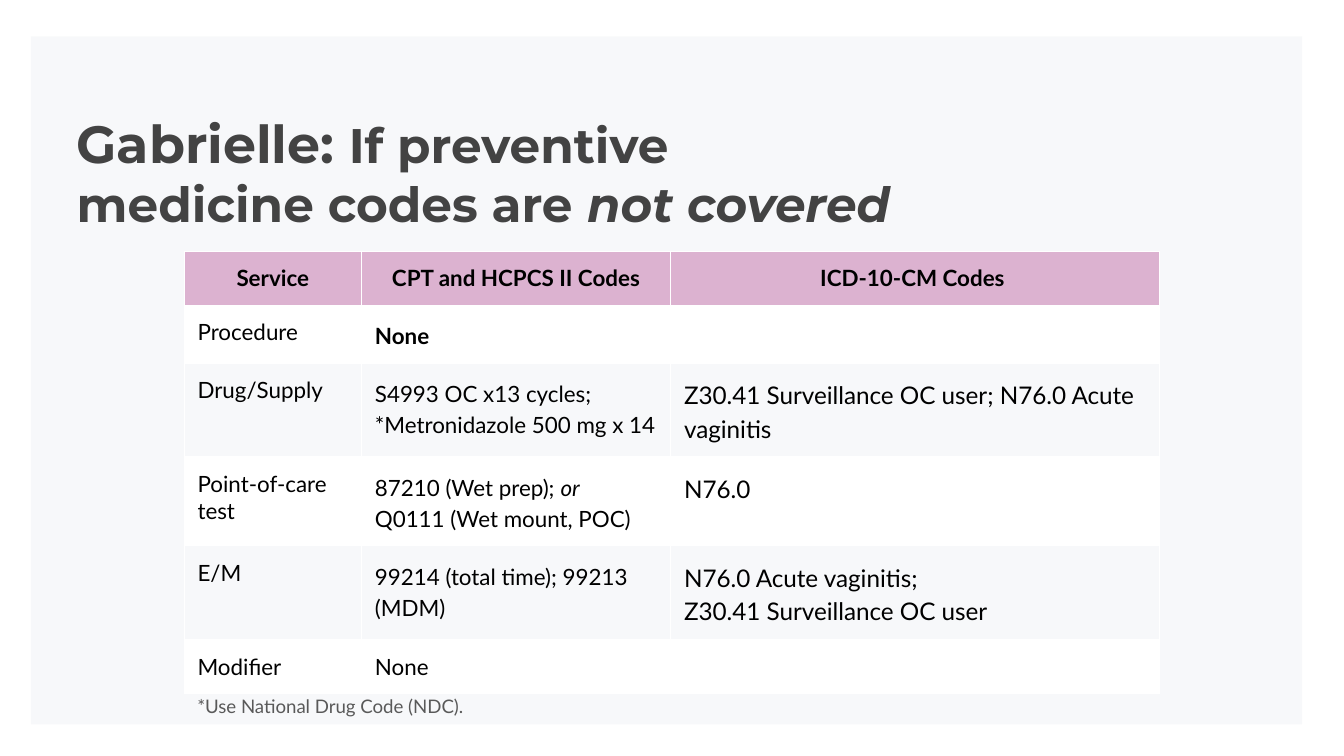
from lxml import etree
from pptx import Presentation, util as u
from pptx.dml.color import RGBColor
from pptx.enum import shapes, text
from pptx.oxml.ns import qn

BODY_FONT = {"name": "Lato", "size": u.Pt(12), "bold": False, "italic": False}
HEADER = ["Service", "CPT and HCPCS II Codes", "ICD-10-CM Codes "]
ROWS = [
    ["Procedure", [[("None", {"bold": True})]], []],
    ["Drug/Supply",
     [[("S4993 OC x13 cycles; *Metronidazole 500 mg x 14", {})]],
     [[("Z30.41 Surveillance OC user; N76.0 Acute vaginitis", {})]]],
    ["Point-of-care test",
     [[("87210 (Wet prep); ", {}), ("or", {"italic": True})],
      [("Q0111 (Wet mount, POC)", {})]],
     [[("N76.0", {})]]],
    ["E/M",
     [[("99214 (total time); 99213 (MDM)", {})]],
     [[("N76.0 Acute vaginitis;", {})], [("Z30.41 Surveillance OC user", {})]]],
    ["Modifier", [[("None", {})]], []],
]
COLUMN_WIDTHS = [1.32, 2.3, 3.64]
ROW_HEIGHTS = [0.39, 0.34, 0.56, 0.55, 0.6, 0.4]


def set_color(color_format, color):
    """Apply a hex colour to a font or fill colour."""
    color_format.rgb = RGBColor.from_string(color)


def fill_solid(fill, color, opacity=100):
    """Fill with a hex colour at an opacity in percent."""
    fill.solid()
    set_color(fill.fore_color, color)
    if opacity < 100:
        element = fill._xPr.find(".//" + qn("a:srgbClr"))
        etree.SubElement(element, qn("a:alpha"), val=str(opacity * 1000))


def set_attributes(target, values):
    """Set each named attribute on the target."""
    for name, value in values.items():
        setattr(target, name, value)


def set_margins(target):
    """Give a frame or cell equal margins."""
    sides = ("left", "top", "right", "bottom")
    set_attributes(target, {f"margin_{side}": u.Inches(0.1) for side in sides})


def write_paragraphs(frame, paragraphs, font, color, **layout):
    """Write paragraphs of (wording, overrides) runs into a frame."""
    for index, runs in enumerate(paragraphs):
        paragraph = frame.add_paragraph() if index else frame.paragraphs[0]
        set_attributes(paragraph, layout)
        for wording, overrides in runs:
            run = paragraph.add_run()
            run.text = wording
            set_attributes(run.font, {**font, **overrides})
            set_color(run.font.color, color)


def add_panel(slide, left, top, width, height):
    """Place the pale panel behind the other parts."""
    box = map(u.Inches, (left, top, width, height))
    panel = slide.shapes.add_shape(shapes.MSO_SHAPE.RECTANGLE, *box)
    panel.shadow.inherit = False
    panel.line.fill.background()
    fill_solid(panel.fill, "073763", 3)
    slide.shapes._spTree.insert(2, panel._element)


def place_title(slide, left, top, width, height):
    """Place and format the slide title."""
    title = slide.shapes.title
    box = map(u.Inches, (left, top, width, height))
    set_attributes(title, dict(zip(("left", "top", "width", "height"), box)))
    frame = title.text_frame
    set_margins(frame)
    set_attributes(frame, {"word_wrap": True, "auto_size": text.MSO_AUTO_SIZE.NONE,
                           "vertical_anchor": text.MSO_ANCHOR.TOP})
    runs = [("Gabrielle: ", {"size": u.Pt(28)}),
            ("If preventive medicine codes are ", {}),
            ("not covered", {"italic": True})]
    font = {"name": "Montserrat", "size": u.Pt(26), "bold": True, "italic": False}
    write_paragraphs(frame, [runs], font, "434343",
                     alignment=text.PP_ALIGN.LEFT, line_spacing=1.0, space_before=u.Pt(0))


def add_note(slide, left, top, width, height):
    """Place the footnote under the table."""
    frame = slide.shapes.add_textbox(*map(u.Inches, (left, top, width, height))).text_frame
    frame.word_wrap = True
    set_margins(frame)
    write_paragraphs(frame, [[("*Use National Drug Code (NDC).", {})]],
                     {**BODY_FONT, "size": u.Pt(10)}, "595959", line_spacing=1.15)


def set_borders(cell, color, width):
    """Draw all four borders of a cell."""
    properties = cell._tc.get_or_add_tcPr()
    for index, side in enumerate(("lnL", "lnR", "lnT", "lnB")):
        line = etree.Element(qn("a:" + side), w=str(u.Pt(width)))
        fill = etree.SubElement(line, qn("a:solidFill"))
        etree.SubElement(fill, qn("a:srgbClr"), val=color)
        properties.insert(index, line)


def write_cell(cell, column, content):
    """Write one body cell by the rule of its column."""
    if not content:
        paragraph = cell.text_frame.paragraphs[0]._p
        etree.SubElement(paragraph, qn("a:endParaRPr"), sz="1200")
        return
    paragraphs = content if column else [[(content, {})]]
    font = {**BODY_FONT, "size": u.Pt(13 if column == 2 else 12)}
    spacing = 1.15 if column and content != ROWS[-1][1] else 1.0
    write_paragraphs(cell.text_frame, paragraphs, font, "000000", line_spacing=spacing)


def add_code_table(slide, left, top):
    """Place the table of services and codes."""
    box = map(u.Inches, (left, top, sum(COLUMN_WIDTHS), sum(ROW_HEIGHTS)))
    table = slide.shapes.add_table(len(ROW_HEIGHTS), len(COLUMN_WIDTHS), *box).table
    for column, width in zip(table.columns, COLUMN_WIDTHS):
        column.width = u.Inches(width)
    for row, height in zip(table.rows, ROW_HEIGHTS):
        row.height = u.Inches(height)
    for row_index, contents in enumerate([HEADER, *ROWS]):
        for column, content in enumerate(contents):
            cell = table.cell(row_index, column)
            set_margins(cell)
            if row_index == 0:
                fill_solid(cell.fill, "C87DB1", 57)
                write_paragraphs(cell.text_frame, [[(content, {"bold": True})]], BODY_FONT,
                                 "000000", alignment=text.PP_ALIGN.CENTER)
            else:
                if row_index % 2:
                    fill_solid(cell.fill, "FFFFFF")
                else:
                    cell.fill.background()
                write_cell(cell, column, content)
            set_borders(cell, "FFFFFF", 0.75)


def main():
    """Build and save the presentation."""
    presentation = Presentation()
    presentation.slide_width = u.Inches(10)
    presentation.slide_height = presentation.slide_width * 9 // 16
    slide = presentation.slides.add_slide(presentation.slide_layouts[5])
    add_panel(slide, 0.23, 0.27, 9.46, 5.12)
    place_title(slide, 0.47, 0.73, 6.36, 0.63)
    add_note(slide, 1.37, 5.05, 7.26, 0.32)
    add_code_table(slide, 1.37, 1.87)
    presentation.save("out.pptx")


if __name__ == "__main__":
    main()
